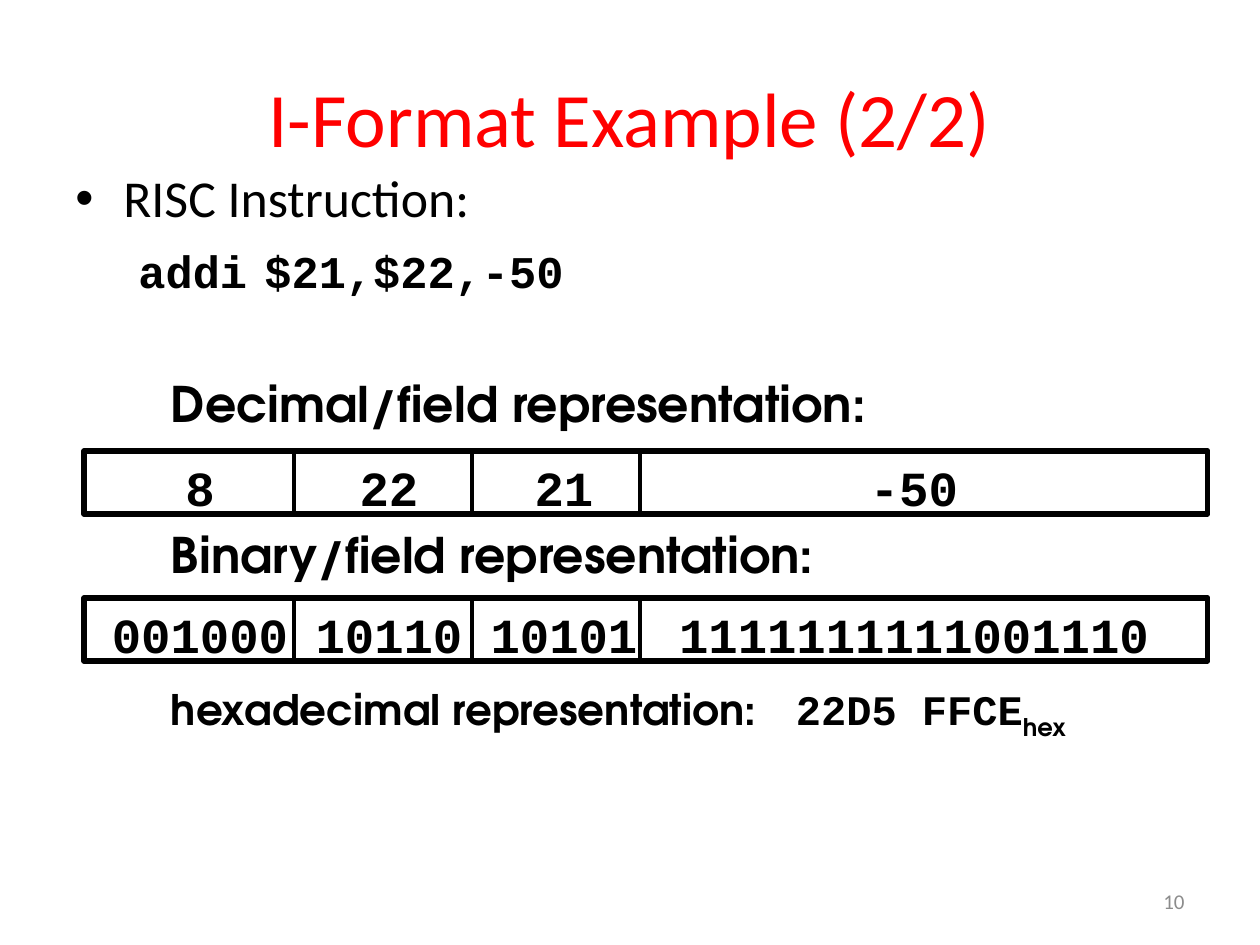
import pptx
import pptx.dml.color
import pptx.enum.shapes
import pptx.enum.text
import pptx.oxml.ns
import pptx.util
from lxml import etree

SCALE = 914400 / 126
SANS, MONO, GEOMETRIC = "Calibri", "Courier New", "TeX Gyre Adventor"
ALIGN = pptx.enum.text.PP_ALIGN
ANCHOR = pptx.enum.text.MSO_ANCHOR


def px(length):
    return pptx.util.Emu(round(length * SCALE))


def color(value):
    return pptx.dml.color.RGBColor.from_string(value)


def add_child(parent, tag, **attributes):
    return etree.SubElement(parent, pptx.oxml.ns.qn(tag), attributes)


def add_span(para, text, font=SANS, size=28, ink="000000", bold=False, baseline=0):
    span = para.add_run()
    span.text = text
    span.font.name = font
    span.font.size = pptx.util.Pt(size)
    span.font.bold = bold
    span.font.color.rgb = color(ink)
    if baseline:
        span._r.get_or_add_rPr().set("baseline", str(baseline))


def write(para, text, align=ALIGN.LEFT, spacing=1.0, before=0, margin=0, indent=0,
          bullet=None, tab=None, **style):
    para.alignment = align
    para.line_spacing = spacing
    para.space_before = pptx.util.Pt(before)
    properties = para._p.get_or_add_pPr()
    properties.set("marL", str(px(margin)))
    properties.set("indent", str(px(indent)))
    if bullet:
        add_child(properties, "a:buFont", typeface="Arial")
        add_child(properties, "a:buChar", char=bullet)
    if tab:
        stops = add_child(properties, "a:tabLst")
        add_child(stops, "a:tab", pos=str(px(tab)), algn="l")
    add_span(para, text, **style)
    return para


def add_box(parent, left, top, width, height, wrap=True, anchor=ANCHOR.TOP, inset=None):
    box = parent.shapes.add_textbox(px(left), px(top), px(width), px(height))
    frame = box.text_frame
    frame.word_wrap = wrap
    frame.vertical_anchor = anchor
    if inset:
        frame.margin_left = frame.margin_right = px(inset[0])
        frame.margin_top = frame.margin_bottom = px(inset[1])
    return frame.paragraphs[0], frame


def add_title(page, left, top, width, height):
    para, _ = add_box(page, left, top, width, height, anchor=ANCHOR.MIDDLE)
    write(para, "I-Format Example (2/2)", align=ALIGN.CENTER, size=44, ink="FF0000")


def add_instruction(page, left, top, width, height):
    para, frame = add_box(page, left, top, width, height)
    write(para, "RISC Instruction:", margin=48, indent=-48, bullet="•", size=29.6)
    write(frame.add_paragraph(), "addi\t$21,$22,-50", before=8.7, indent=63, tab=253,
          font=MONO, size=25.9, bold=True)


def add_heading(page, left, top, width, height, text, **style):
    para, _ = add_box(page, left, top, width, height, inset=(9, 4))
    return write(para, text, spacing=0.85, indent=68, font=GEOMETRIC, bold=True, **style)


def add_fields(page, left, top, width, height, values):
    group = page.shapes.add_group_shape()
    for value, center in zip(values, (116, 305, 480, 830)):
        value_width = 25 + round(29.4 * len(value))
        para, _ = add_box(group, left + center - value_width / 2, top, value_width, 72, wrap=False)
        write(para, value, align=ALIGN.CENTER, font=MONO, bold=True)
    outline = group.shapes.add_shape(pptx.enum.shapes.MSO_SHAPE.RECTANGLE,
                                     px(left), px(top), px(width), px(height))
    outline.shadow.inherit = False
    outline.fill.background()
    outline.line.color.rgb = color("000000")
    outline.line.width = pptx.util.Pt(3)
    for offset in (210, 388, 556):
        divider = group.shapes.add_connector(
            pptx.enum.shapes.MSO_CONNECTOR.STRAIGHT,
            px(left + offset), px(top), px(left + offset), px(top + height))
        divider.line.color.rgb = color("000000")
        divider.line.width = pptx.util.Pt(2.25)
        add_child(divider._element.spPr, "a:effectLst")


def add_page_number(page, left, top, width, height):
    para, _ = add_box(page, left, top, width, height, anchor=ANCHOR.MIDDLE)
    write(para, "10", align=ALIGN.RIGHT, size=12, ink="8C8C8C")


def main():
    deck = pptx.Presentation()
    deck.slide_width, deck.slide_height = px(1260), px(945)
    page = deck.slides.add_slide(deck.slide_layouts[6])
    add_title(page, 63, 38, 1134, 158)
    add_instruction(page, 63, 160, 1081, 131)
    add_fields(page, 84, 451, 1124, 63, ("8", "22", "21", "-50"))
    add_fields(page, 84, 598, 1124, 63, ("001000", "10110", "10101", "1111111111001110"))
    add_heading(page, 94, 378, 1081, 59, "Decimal/field representation:")
    add_heading(page, 94, 530, 1081, 59, "Binary/field representation:")
    para = add_heading(page, 94, 683, 1081, 52, "hexadecimal representation:\t", size=24, tab=676)
    add_span(para, "22D5 FFCE", font=MONO, size=24, bold=True)
    add_span(para, "hex", font=GEOMETRIC, size=24, bold=True, baseline=-25000)
    add_page_number(page, 903, 876, 294, 50)
    deck.save("out.pptx")


if __name__ == "__main__":
    main()
